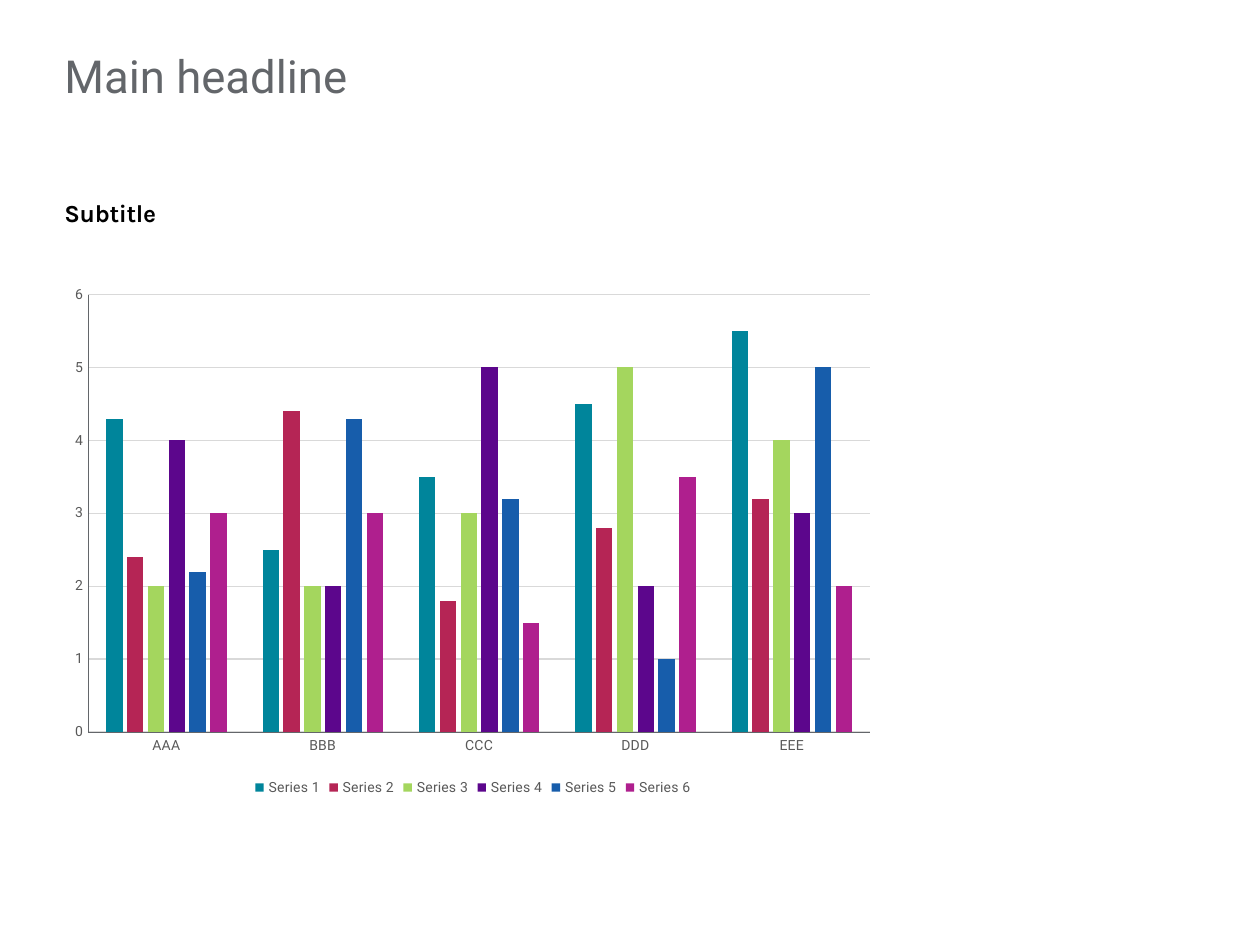
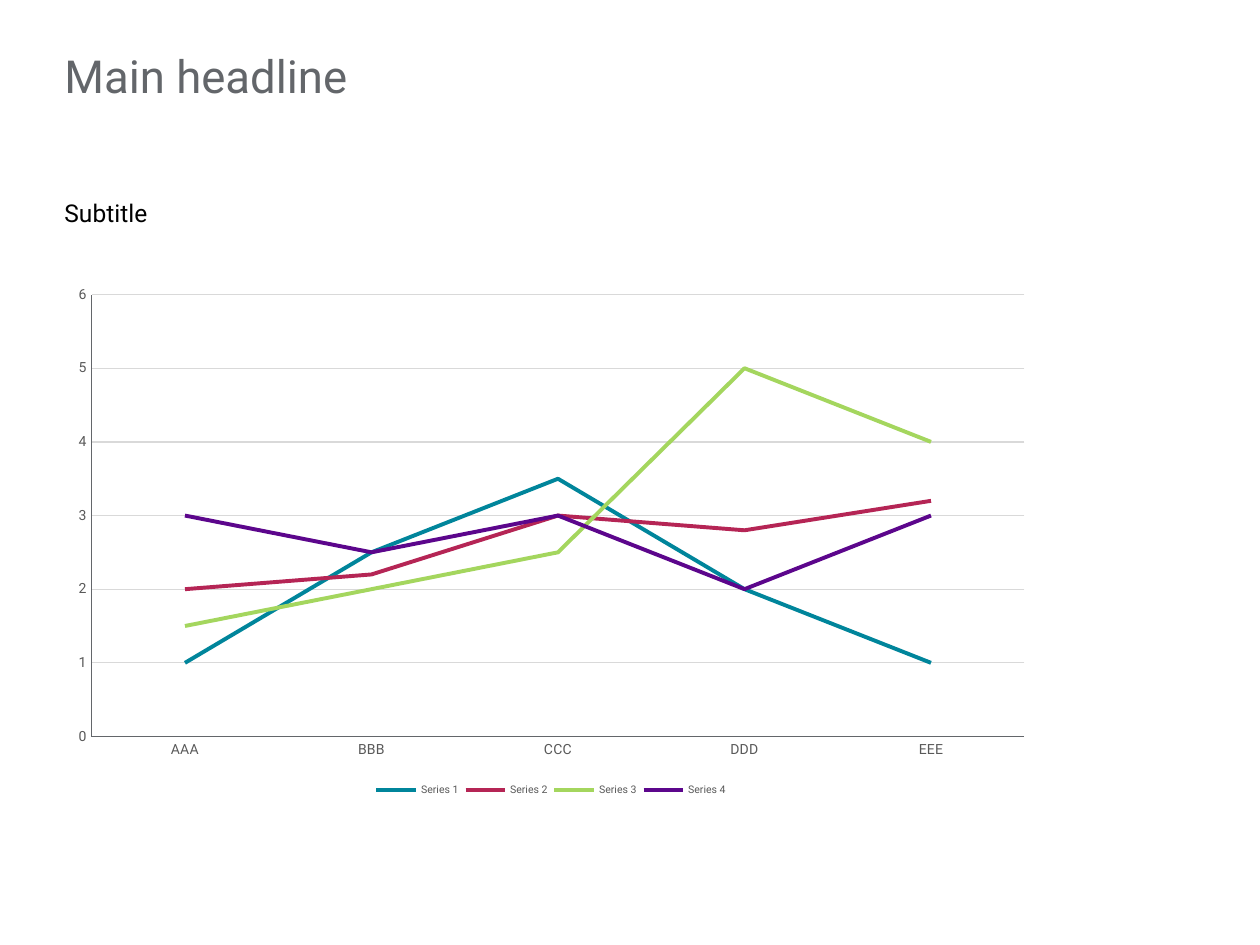
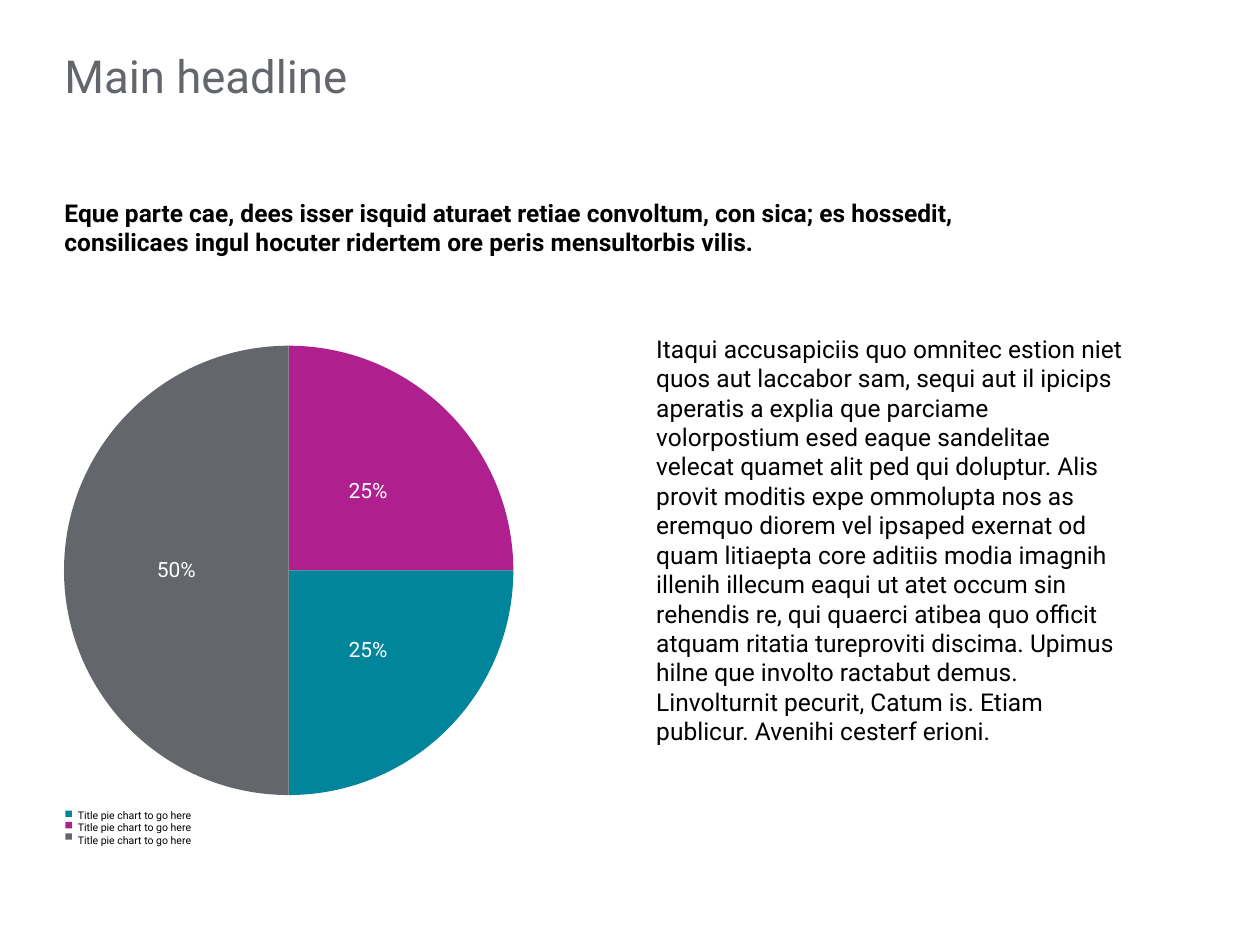
from lxml import etree
from pptx import Presentation
from pptx.chart.data import CategoryChartData
from pptx.dml.color import RGBColor
from pptx.enum.chart import (XL_CHART_TYPE, XL_LABEL_POSITION,
                             XL_LEGEND_POSITION, XL_TICK_MARK)
from pptx.enum.shapes import MSO_SHAPE
from pptx.oxml.ns import qn
from pptx.util import Cm, Pt

COLUMN = XL_CHART_TYPE.COLUMN_CLUSTERED
LINE = XL_CHART_TYPE.LINE
PIE = XL_CHART_TYPE.PIE
CENTER = XL_LABEL_POSITION.CENTER
BOTTOM = XL_LEGEND_POSITION.BOTTOM
NO_TICK = XL_TICK_MARK.NONE
RECTANGLE = MSO_SHAPE.RECTANGLE

BLACK = RGBColor(0x00, 0x00, 0x00)
WHITE = RGBColor(0xFF, 0xFF, 0xFF)
GRAY = RGBColor(0x63, 0x66, 0x6A)
LABEL_GRAY = RGBColor(0x59, 0x59, 0x59)
GRID_GRAY = RGBColor(0xD9, 0xD9, 0xD9)
TEAL = RGBColor(0x00, 0x85, 0x9B)
RED = RGBColor(0xB5, 0x25, 0x55)
GREEN = RGBColor(0xA4, 0xD6, 0x5E)
PURPLE = RGBColor(0x5C, 0x06, 0x8C)
BLUE = RGBColor(0x17, 0x5D, 0xAB)
MAGENTA = RGBColor(0xAF, 0x1F, 0x8E)
SERIES_COLORS = (TEAL, RED, GREEN, PURPLE, BLUE, MAGENTA)

FONT = "Roboto"
MARGIN = 1.3
CATEGORIES = ("AAA", "BBB", "CCC", "DDD", "EEE")
COLUMN_VALUES = (
    (4.3, 2.5, 3.5, 4.5, 5.5),
    (2.4, 4.4, 1.8, 2.8, 3.2),
    (2, 2, 3, 5, 4),
    (4, 2, 5, 2, 3),
    (2.2, 4.3, 3.2, 1, 5),
    (3, 3, 1.5, 3.5, 2),
)
LINE_VALUES = (
    (1, 2.5, 3.5, 2, 1),
    (2, 2.2, 3, 2.8, 3.2),
    (1.5, 2, 2.5, 5, 4),
    (3, 2.5, 3, 2, 3),
)
LEAD = ("Eque parte cae, dees isser isquid aturaet retiae convoltum, con sica; "
        "es hossedit, consilicaes ingul hocuter ridertem ore peris "
        "mensultorbis vilis.")
BODY = ("Itaqui accusapiciis quo omnitec estion niet quos aut laccabor sam, "
        "sequi aut il ipicips aperatis a explia que parciame volorpostium esed "
        "eaque sandelitae velecat quamet alit ped qui doluptur. Alis provit "
        "moditis expe ommolupta nos as eremquo diorem vel ipsaped exernat od "
        "quam litiaepta core aditiis modia imagnih illenih illecum eaqui ut "
        "atet occum sin rehendis re, qui quaerci atibea quo officit atquam "
        "ritatia tureproviti discima. Upimus hilne que involto ractabut demus. "
        "Linvolturnit pecurit, Catum is. Etiam publicur. Avenihi cesterf erioni.")


def put(target, **values):
    for name, value in values.items():
        setattr(target, name, value)


def style_font(font, size, color, **values):
    put(font, **{"name": FONT, "size": Pt(size), **values})
    font.color.rgb = color


def style_line(line, color, width):
    line.color.rgb = color
    line.width = Pt(width)


class Deck:
    def __init__(self):
        self.prs = Presentation()
        put(self.prs, slide_width=Cm(25.4), slide_height=Cm(19.05))
        self.s = None

    def slide(self, headline="Main headline"):
        self.s = self.prs.slides.add_slide(self.prs.slide_layouts[6])
        self.text(headline, (MARGIN, 1.09, 16.69, 2.01), 26, GRAY,
                  spacing={"line_spacing": 0.9})

    def text(self, text, box, size, color=BLACK, spacing=None, tracking=None,
             **font):
        """Write one paragraph per line of text; tracking is in 1/100 pt."""
        tf = self.s.shapes.add_textbox(*map(Cm, box)).text_frame
        put(tf, word_wrap=True, margin_left=0, margin_top=0, margin_right=0,
            margin_bottom=0, text=text)
        for p in tf.paragraphs:
            put(p, **(spacing or {}))
            for r in p.runs:
                style_font(r.font, size, color, **font)
                if tracking:
                    r.font._element.set("spc", str(tracking))

    def paragraph(self, text, box, **options):
        self.text(text, box, 14, spacing={"space_after": Pt(7)}, **options)

    def subtitle(self, text, width, **options):
        self.paragraph(text, (MARGIN, 3.99, width, 1.19), **options)

    def square(self, left, top, size, color):
        sp = self.s.shapes.add_shape(RECTANGLE, *map(Cm, (left, top, size, size)))
        sp.shadow.inherit = False
        sp.fill.solid()
        sp.fill.fore_color.rgb = color
        sp.line.fill.background()

    def chart(self, kind, categories, rows, box, plot_box):
        """Add a chart whose inner plot area fills plot_box on the slide."""
        data = CategoryChartData()
        data.categories = categories
        for number, row in enumerate(rows, 1):
            data.add_series(f"Series {number}", row)
        chart = self.s.shapes.add_chart(kind, *map(Cm, box), data).chart
        put(chart, has_title=False, has_legend=False)
        style_font(chart.font, 10, BLACK)

        left, top, width, height = box
        x, y, w, h = plot_box
        area = chart._chartSpace.find(".//" + qn("c:plotArea"))
        for old in area.findall(qn("c:layout")):
            area.remove(old)
        layout = etree.Element(qn("c:layout"))
        manual = etree.SubElement(layout, qn("c:manualLayout"))
        for tag, value in (("layoutTarget", "inner"),
                           ("xMode", "edge"), ("yMode", "edge"),
                           ("x", (x - left) / width), ("y", (y - top) / height),
                           ("w", w / width), ("h", h / height)):
            etree.SubElement(manual, qn("c:" + tag)).set("val", str(value))
        area.insert(0, layout)
        return chart

    def axis_chart(self, kind, rows, box, plot_box, legend_size):
        chart = self.chart(kind, CATEGORIES, rows, box, plot_box)
        chart.plots[0].vary_by_categories = False
        for axis in (chart.category_axis, chart.value_axis):
            put(axis, major_tick_mark=NO_TICK, minor_tick_mark=NO_TICK)
            style_font(axis.tick_labels.font, 8, LABEL_GRAY)
            style_line(axis.format.line, GRAY, 0.5)
        put(chart.value_axis, minimum_scale=0, maximum_scale=6, major_unit=1)
        style_line(chart.value_axis.major_gridlines.format.line, GRID_GRAY, 0.75)
        chart.has_legend = True
        put(chart.legend, position=BOTTOM, include_in_layout=False)
        style_font(chart.legend.font, legend_size, LABEL_GRAY)
        return chart

    def column_chart(self, rows, box, plot_box):
        plot = self.axis_chart(COLUMN, rows, box, plot_box, 8).plots[0]
        put(plot, gap_width=219, overlap=-27)
        for series, color in zip(plot.series, SERIES_COLORS):
            series.format.fill.solid()
            series.format.fill.fore_color.rgb = color

    def line_chart(self, rows, box, plot_box):
        plot = self.axis_chart(LINE, rows, box, plot_box, 6).plots[0]
        for series, color in zip(plot.series, SERIES_COLORS):
            series.smooth = False
            style_line(series.format.line, color, 2.25)

    def pie_chart(self, values, colors, box, plot_box):
        categories = [str(n) for n in range(1, len(values) + 1)]
        plot = self.chart(PIE, categories, [values], box, plot_box).plots[0]
        put(plot, vary_by_categories=True, has_data_labels=True)
        put(plot.data_labels, show_value=True, show_percentage=False,
            position=CENTER, number_format="0%", number_format_is_linked=False)
        style_font(plot.data_labels.font, 12, WHITE)
        for i, color in enumerate(colors):
            fill = plot.series[0].points[i].format.fill
            fill.solid()
            fill.fore_color.rgb = color

    def pie_key(self, label, colors):
        for i, color in enumerate(colors):
            self.square(1.32, 16.34 + i * 0.23, 0.13, color)
        self.text("\n".join([label] * len(colors)), (1.57, 16.3, 2.6, 0.79), 6)


def main():
    deck = Deck()

    deck.slide()
    deck.subtitle("Subtitle", 16.69, name="Karla", bold=True, tracking=-20)
    deck.column_chart(COLUMN_VALUES, (1.19, 5.56, 16.69, 10.59),
                      (1.78, 5.94, 15.76, 8.82))

    deck.slide()
    deck.subtitle("Subtitle", 18.29)
    deck.line_chart(LINE_VALUES, (1.19, 5.56, 19.84, 10.59),
                    (1.85, 5.94, 18.8, 8.91))

    deck.slide()
    deck.subtitle(LEAD, 19.1, bold=True)
    deck.pie_chart((0.25, 0.25, 0.5), (MAGENTA, TEAL, GRAY),
                   (0.23, 6.63, 11.2, 9.75), (1.29, 6.97, 9.06, 9.06))
    deck.paragraph(BODY, (13.23, 6.73, 9.55, 9.42))
    deck.pie_key("Title pie chart to go here", (TEAL, MAGENTA, GRAY))

    deck.prs.save("out.pptx")


if __name__ == "__main__":
    main()
